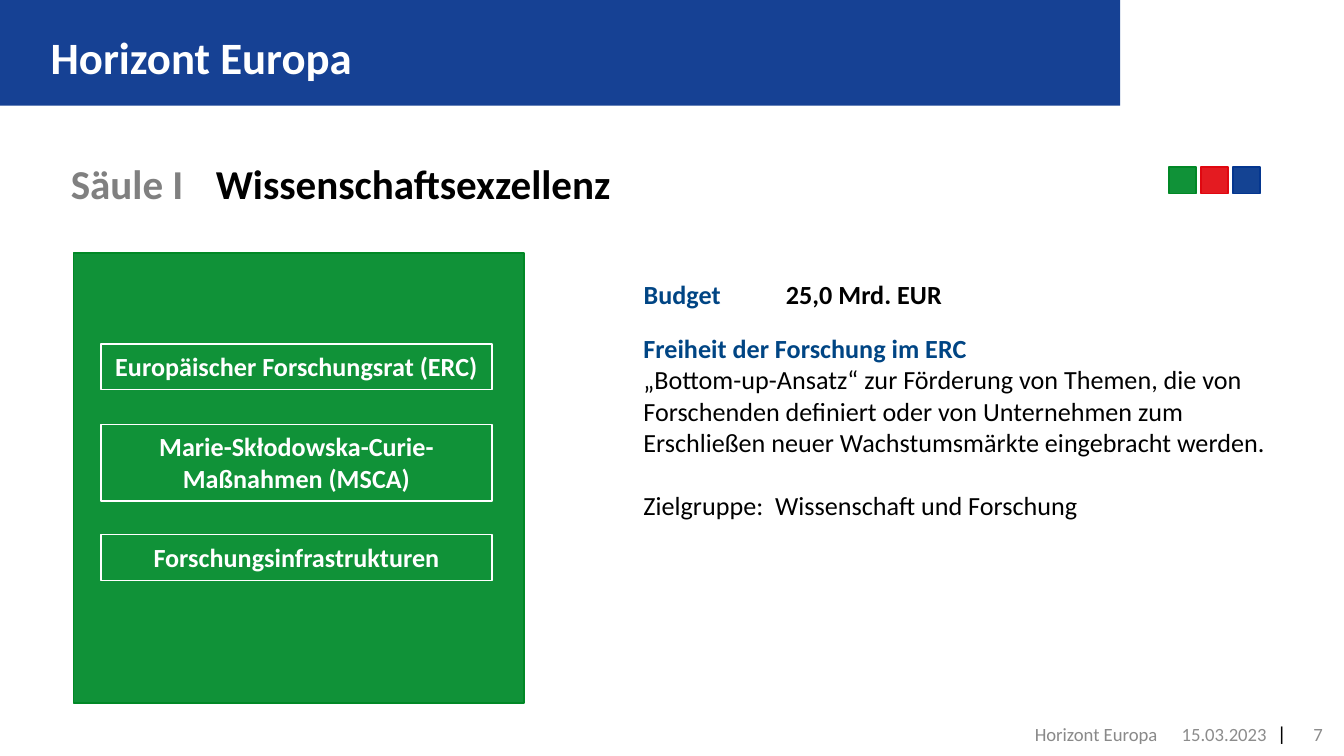
from dataclasses import dataclass

from pptx import Presentation
from pptx import util as u
from pptx.dml.color import RGBColor
from pptx.enum import shapes, text


@dataclass(frozen=True)
class Theme:
    font: str = "Calibri"
    bar_font: str = "Arial"
    title_size: int = 24
    heading_size: int = 22
    body_size: int = 14
    footer_size: int = 10
    white: str = "FFFFFF"
    black: str = "000000"
    banner: str = "164194"
    accent: str = "004584"
    heading_grey: str = "808080"
    footer_grey: str = "8C8C8C"
    footer_label: str = "898989"
    green: tuple = ("109238", "018826")
    red: tuple = ("E41B21", "E00710")
    blue: tuple = ("144393", "04368F")


THEME = Theme()
INSETS = (0.25, 0.13, 0.25, 0.13)

TITLE = "Horizont Europa"
HEADING = [("Säule I\t", THEME.heading_grey), ("Wissenschaftsexzellenz", THEME.black)]
PROGRAMMES = [
    ("Europäischer Forschungsrat (ERC)", 6.5, 0.87),
    ("Marie-Skłodowska-Curie-Maßnahmen (MSCA)", 8.02, 1.45),
    ("Forschungsinfrastrukturen", 10.1, 0.87),
]
BUDGET = [("Budget", THEME.accent, 2.69), ("25,0 Mrd. EUR", THEME.black, 3.91)]
DETAILS = [
    ("Freiheit der Forschung im ERC", THEME.accent, True, 0, 0),
    ("„Bottom-up-Ansatz“ zur Förderung von Themen, die von Forschenden definiert "
     "oder von Unternehmen zum Erschließen neuer Wachstumsmärkte eingebracht werden.",
     THEME.black, False, 0, 0),
    ("Zielgruppe:\tWissenschaft und Forschung", THEME.black, False, 2.49, 17),
]
FOOTER = [
    ("15.03.2023", 22.17, 1.93, text.PP_ALIGN.CENTER, THEME.footer_grey, (0.1, 0.1, 0.1, 0.2)),
    ("Horizont Europa", 10.31, 11.81, text.PP_ALIGN.RIGHT, THEME.footer_label, (0.25, 0.1, 0.25, 0.2)),
    ("7", 24.31, 0.99, text.PP_ALIGN.RIGHT, THEME.footer_grey, (0, 0.1, 0.3, 0.2)),
]


def color(value):
    return RGBColor.from_string(value)


def add_run(paragraph, words, size, ink, bold=False, font=THEME.font):
    run = paragraph.add_run()
    run.text = words
    run.font.name = font
    run.font.size = u.Pt(size)
    run.font.bold = bold
    run.font.color.rgb = color(ink)


def hang(paragraph, indent):
    properties = paragraph._p.get_or_add_pPr()
    properties.set("marL", str(u.Cm(indent)))
    properties.set("indent", str(-u.Cm(indent)))


def add_text_box(slide, left, top, width, height, insets=INSETS,
                 anchor=text.MSO_ANCHOR.MIDDLE, wrap=True):
    frame = slide.shapes.add_textbox(*map(u.Cm, (left, top, width, height))).text_frame
    frame.word_wrap = wrap
    frame.vertical_anchor = anchor
    frame.margin_left, frame.margin_top, frame.margin_right, frame.margin_bottom = map(u.Cm, insets)
    return frame


def add_box(slide, left, top, width, height, fill=None, line=None, line_width=1):
    shape = slide.shapes.add_shape(
        shapes.MSO_SHAPE.RECTANGLE, *map(u.Cm, (left, top, width, height)))
    shape.shadow.inherit = False
    if fill:
        shape.fill.solid()
        shape.fill.fore_color.rgb = color(fill)
    else:
        shape.fill.background()
    if line:
        shape.line.color.rgb = color(line)
        shape.line.width = u.Pt(line_width)
    else:
        shape.line.fill.background()
    return shape


def add_header(slide):
    add_box(slide, 0, 0, 21.17, 2, THEME.banner)
    title = add_text_box(slide, 0.71, 0.36, 19, 1.42)
    add_run(title.paragraphs[0], TITLE, THEME.title_size, THEME.white, True)
    paragraph = add_text_box(slide, 1.09, 2.36, 23.19, 2.21).paragraphs[0]
    hang(paragraph, 2.74)
    for words, ink in HEADING:
        add_run(paragraph, words, THEME.heading_size, ink, True)
    for index, pair in enumerate((THEME.green, THEME.red, THEME.blue)):
        add_box(slide, 22.1 + 0.6 * index, 3.15, 0.51, 0.51, *pair)


def add_programmes(slide):
    add_box(slide, 1.39, 4.78, 8.51, 8.51, *THEME.green)
    for words, top, height in PROGRAMMES:
        shape = add_box(slide, 1.91, top, 7.39, height, None, THEME.white, 0.75)
        frame = shape.text_frame
        frame.word_wrap = True
        frame.vertical_anchor = text.MSO_ANCHOR.TOP
        paragraph = frame.paragraphs[0]
        paragraph.alignment = text.PP_ALIGN.CENTER
        add_run(paragraph, words, THEME.body_size, THEME.white, True)


def add_budget(slide):
    width = sum(column for _, _, column in BUDGET)
    table = slide.shapes.add_table(
        1, len(BUDGET), *map(u.Cm, (11.91, 5.15, width, 0.84))).table
    table.first_row = False
    table.horz_banding = False
    for index, (words, ink, column) in enumerate(BUDGET):
        table.columns[index].width = u.Cm(column)
        cell = table.cell(0, index)
        cell.fill.solid()
        cell.fill.fore_color.rgb = color(THEME.white)
        add_run(cell.text_frame.paragraphs[0], words, THEME.body_size, ink, True)


def add_details(slide):
    frame = add_text_box(slide, 11.91, 6.15, 12.4, 3.84, anchor=text.MSO_ANCHOR.TOP)
    for index, (words, ink, bold, indent, space) in enumerate(DETAILS):
        paragraph = frame.add_paragraph() if index else frame.paragraphs[0]
        if indent:
            hang(paragraph, indent)
        if space:
            paragraph.space_before = u.Pt(space)
        add_run(paragraph, words, THEME.body_size, ink, bold)


def add_footer(slide):
    bar = add_text_box(slide, 24.08, 13.54, 0.3, 0.74, (0.1, 0.1, 0.1, 0.2),
                       text.MSO_ANCHOR.TOP, False)
    add_run(bar.paragraphs[0], "|", THEME.footer_size, THEME.black, font=THEME.bar_font)
    for words, left, width, alignment, ink, insets in FOOTER:
        paragraph = add_text_box(slide, left, 13.54, width, 0.76, insets).paragraphs[0]
        paragraph.alignment = alignment
        add_run(paragraph, words, THEME.footer_size, ink)


def main():
    presentation = Presentation()
    presentation.slide_width = u.Cm(25.4)
    presentation.slide_height = u.Cm(14.29)
    slide = presentation.slides.add_slide(presentation.slide_layouts[6])
    add_header(slide)
    add_programmes(slide)
    add_budget(slide)
    add_details(slide)
    add_footer(slide)
    presentation.save("out.pptx")


if __name__ == "__main__":
    main()
